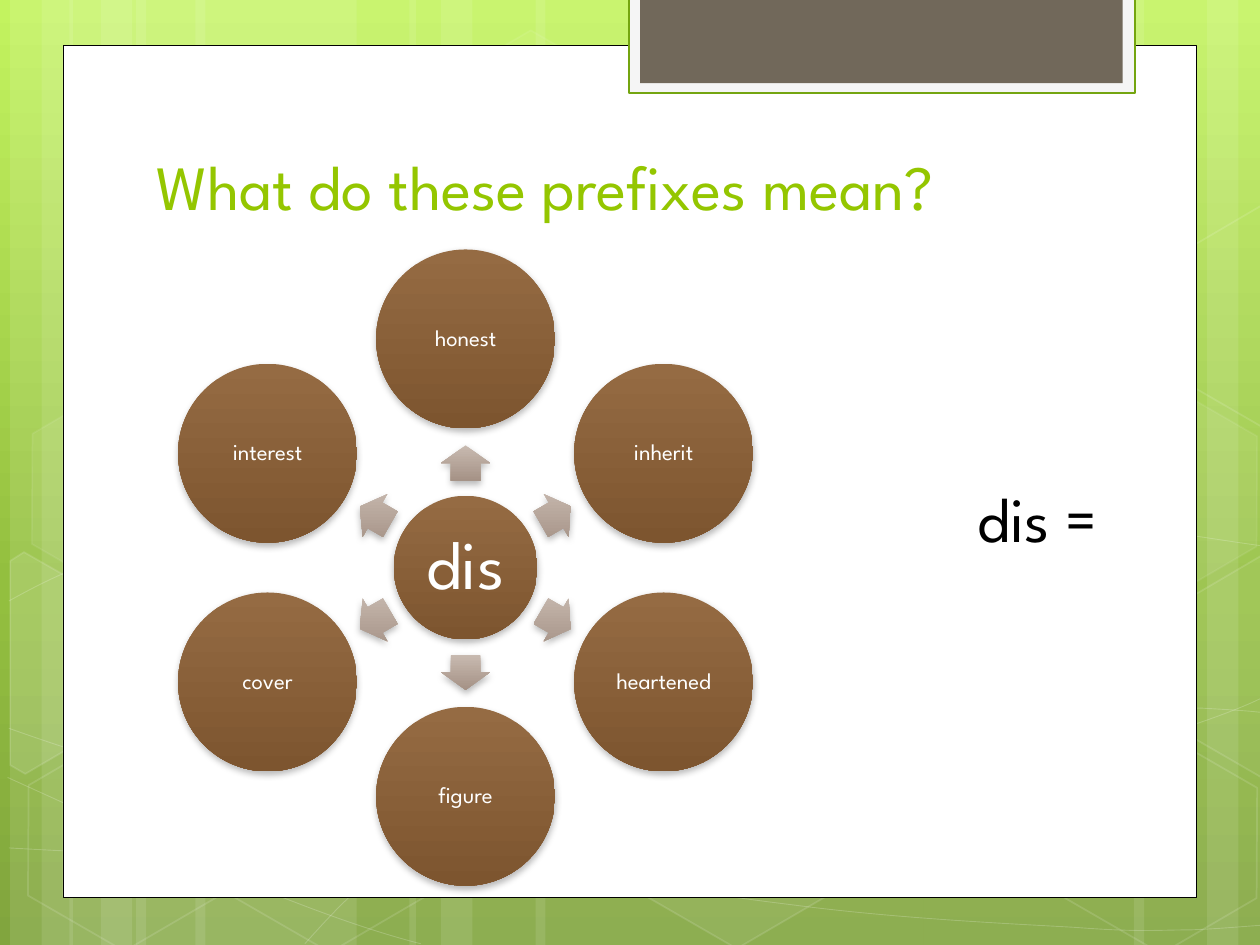
from math import cos, radians, sin

from lxml import etree
from pptx import Presentation
from pptx.dml.color import RGBColor
from pptx.enum.shapes import MSO_SHAPE
from pptx.enum.text import MSO_ANCHOR, PP_ALIGN
from pptx.oxml.ns import qn
from pptx.util import Inches, Pt

FONT = "League Spartan"
BROWN = [(0, "956B43"), (100, "7D552F")]
TAUPE = [(0, "C8BAB0"), (100, "A59286")]


def color(hex_code):
    return RGBColor.from_string(hex_code)


def set_alpha(fill, element, percent):
    """Make the solid white of a fill or line partly transparent."""
    fill.solid()
    fill.fore_color.rgb = color("FFFFFF")
    etree.SubElement(element.find(".//" + qn("a:srgbClr")), qn("a:alpha"), val=str(percent * 1000))


def set_gradient(fill, owner, stops):
    """Vertical gradient that stays upright when its shape is turned."""
    fill.gradient()
    fill.gradient_angle = 270
    stop_list = owner.xpath(".//a:gsLst")[0]
    stop_list.getparent().set("rotWithShape", "0")
    for stop in list(stop_list):
        stop_list.remove(stop)
    for position, hex_code in stops:
        stop = etree.SubElement(stop_list, qn("a:gs"), pos=str(position * 1000))
        etree.SubElement(stop, qn("a:srgbClr"), val=hex_code)


def add_soft_shadow(shape):
    effects = shape._element.spPr.find(qn("a:effectLst"))
    shadow = etree.SubElement(effects, qn("a:outerShdw"), blurRad=str(Pt(4)), dist=str(Pt(2)),
                              dir="5400000", rotWithShape="0")
    black = etree.SubElement(shadow, qn("a:srgbClr"), val="000000")
    etree.SubElement(black, qn("a:alpha"), val="28000")


def add_plain(slide, kind, left, top, width, height):
    shape = slide.shapes.add_shape(kind, Inches(left), Inches(top), Inches(width), Inches(height))
    shape.shadow.inherit = False
    shape.fill.background()
    shape.line.fill.background()
    return shape


def style_glass(shape, fill_alpha, line_alpha, line_width):
    """Translucent white fill and outline; an alpha of 0 leaves that part out."""
    shape.shadow.inherit = False
    shape.fill.background()
    shape.line.fill.background()
    if fill_alpha:
        set_alpha(shape.fill, shape._element.spPr, fill_alpha)
    if line_alpha:
        shape.line.width = Pt(line_width)
        set_alpha(shape.line.fill, shape._element.spPr.find(qn("a:ln")), line_alpha)


def add_outline(slide, points, closed):
    corners = [(Inches(x), Inches(y)) for x, y in points]
    builder = slide.shapes.build_freeform(*corners[0])
    builder.add_line_segments(corners[1:], close=closed)
    return builder.convert_to_shape()


def add_curve(slide, points):
    """Chain of cubic Bezier segments: a start, then three points for each segment."""
    curve = add_outline(slide, points, False)
    lines = curve._element.xpath(".//a:lnTo")
    for i in range(0, len(lines), 3):
        segment = etree.Element(qn("a:cubicBezTo"))
        lines[i].addprevious(segment)
        for line in lines[i:i + 3]:
            segment.append(line[0])
            line.getparent().remove(line)
    return curve


def add_turned_outline(slide, points, center, angle):
    """Closed outline, given as it appears after turning about its center."""
    turn_cos, turn_sin = cos(radians(angle)), sin(radians(angle))
    offsets = [(x - center[0], y - center[1]) for x, y in points]
    upright = [(center[0] + dx * turn_cos + dy * turn_sin, center[1] - dx * turn_sin + dy * turn_cos)
               for dx, dy in offsets]
    outline = add_outline(slide, upright, True)
    outline.rotation = angle
    return outline


def add_text(frame, text, size, hex_code, align=PP_ALIGN.LEFT):
    paragraph = frame.paragraphs[0]
    paragraph.alignment = align
    run = paragraph.add_run()
    run.text = text
    run.font.size = Pt(size)
    run.font.name = FONT
    run.font.color.rgb = color(hex_code)
    return paragraph


def draw_backdrop(slide, height):
    set_gradient(slide.background.fill, slide._element,
                 [(0, "C3F35F"), (62, "93BF3F"), (100, "81A53E")])
    # Vertical light bands: left edge and width
    bands = [(1.08, 1.75), (0.08, 0.5), (0.33, 0.83), (1.55, 1.75), (0.55, 0.5), (0.8, 0.83),
             (7.33, 1.75), (9.58, 0.5), (9, 0.83), (4.25, 3.08), (3.25, 0.5), (3.5, 0.83)]
    for left, band_width in bands:
        band = add_plain(slide, MSO_SHAPE.RECTANGLE, left, 0, band_width, height)
        style_glass(band, 10, 0, 0)
    # Thin flowing lines
    curves = [
        [(0.07, 6.73), (0.61, 6.76), (1.15, 6.79), (1.9, 6.78), (2.65, 6.77), (3.58, 6.75),
         (4.58, 6.65), (5.58, 6.55), (7, 6.36), (7.92, 6.17), (8.83, 5.98), (9.77, 5.68),
         (10.07, 5.51)],
        [(0.07, 4.77), (0.36, 4.61), (0.65, 4.46), (1.21, 4.31), (1.78, 4.16), (2.59, 3.94),
         (3.47, 3.87), (4.36, 3.8), (5.44, 3.79), (6.54, 3.87), (7.64, 3.95), (9.47, 4.26),
         (10.07, 4.34)],
        [(0.06, 6.17), (1.27, 6.72), (2.47, 7.27), (3.34, 7.49)],
        [(0.07, 5.78), (0.38, 5.89), (0.7, 6), (1.28, 6.16), (1.86, 6.31), (2.73, 6.56),
         (3.57, 6.73), (4.4, 6.9), (5.45, 7.08), (6.28, 7.18), (7.11, 7.29), (8, 7.33),
         (8.53, 7.36), (9.05, 7.4), (9.19, 7.38), (9.45, 7.38), (9.71, 7.37), (9.89, 7.35),
         (10.07, 7.34)],
        [(2.42, 7.49), (2.6, 7.29), (2.78, 7.09), (3.02, 6.91), (3.26, 6.73), (3.6, 6.53),
         (3.88, 6.39), (4.16, 6.25), (4.33, 6.19), (4.7, 6.09), (5.06, 5.99), (5.73, 5.85),
         (6.08, 5.78), (6.44, 5.71), (6.49, 5.71), (6.8, 5.69), (7.11, 5.66), (7.6, 5.63),
         (7.94, 5.62), (8.29, 5.61), (8.86, 5.62), (8.86, 5.62), (8.86, 5.62), (9.53, 5.62),
         (9.53, 5.62), (9.71, 5.63), (9.88, 5.64), (9.97, 5.65), (10.06, 5.66), (10.03, 5.65),
         (10.06, 5.66)],
    ]
    for curve in curves:
        style_glass(add_curve(slide, curve), 0, 20, 0.5)
    # Hexagons: left, top, fill alpha, line alpha
    hexagons = [(3.34, 0.36, 4, 8), (4.97, 5.89, 6, 12), (0.11, 5.91, 0, 12),
                (0.14, 3.12, 7, 8), (1.74, 5.92, 0, 12), (7.53, 4.53, 10, 12),
                (8.34, 5.93, 0, 12), (8.34, 3.14, 7, 8)]
    for left, top, fill_alpha, line_alpha in hexagons:
        hexagon = add_plain(slide, MSO_SHAPE.HEXAGON, left, top, 1.75, 1.52)
        hexagon.adjustments[0] = 0.285
        hexagon.adjustments[1] = 1.155
        hexagon.rotation = 30
        style_glass(hexagon, fill_alpha, line_alpha, 1)
    # Hexagons cut off by the slide edges: corners, center, fill alpha
    left_cut = [(0.08, 4.45), (0.19, 4.38), (0.96, 4.82), (0.95, 5.7), (0.2, 6.14), (0.08, 6.07)]
    right_cut = [(9.26, 2.07), (10.01, 1.63), (10.09, 1.68), (10.09, 3.35), (10.02, 3.39),
                 (9.26, 2.95)]
    lower_cut = [(x, y + 2.78) for x, y in right_cut]
    for corners, center, fill_alpha in ((left_cut, (0.36, 5.35), 10),
                                        (lower_cut, (9.85, 5.2), 4),
                                        (right_cut, (9.85, 2.41), 0)):
        style_glass(add_turned_outline(slide, corners, center, 30), fill_alpha, 12, 1)


def draw_page(slide, left, top, width, height):
    """White page with the framed tab hanging over its top edge."""
    panels = [(left, top, width, height, "FFFFFF", "000000", 0.5),
              (left + 4.49, -0.02, 4.02, 0.76, "F5F5F5", "74A510", 1.25),
              (left + 4.58, -0.02, 3.83, 0.68, "71685A", None, 0)]
    for *box, fill_color, line_color, line_width in panels:
        panel = add_plain(slide, MSO_SHAPE.RECTANGLE, *box)
        panel.fill.solid()
        panel.fill.fore_color.rgb = color(fill_color)
        if line_color:
            panel.line.color.rgb = color(line_color)
            panel.line.width = Pt(line_width)


def draw_label(slide, left, top, width, height, text, hex_code, anchor, wrap):
    box = slide.shapes.add_textbox(Inches(left), Inches(top), Inches(width), Inches(height))
    box.text_frame.word_wrap = wrap
    box.text_frame.vertical_anchor = anchor
    add_text(box.text_frame, text, 36, hex_code)


def draw_circle(slide, x, y, diameter, text, size, inset):
    circle = add_plain(slide, MSO_SHAPE.OVAL, x - diameter / 2, y - diameter / 2, diameter, diameter)
    set_gradient(circle.fill, circle._element, BROWN)
    add_soft_shadow(circle)
    frame = circle.text_frame
    frame.word_wrap = True
    frame.vertical_anchor = MSO_ANCHOR.MIDDLE
    frame.margin_left = frame.margin_right = frame.margin_top = frame.margin_bottom = Inches(inset)
    add_text(frame, text, size, "FFFFFF", PP_ALIGN.CENTER).line_spacing = 0.9


def draw_word_wheel(slide, left, top, width, height, prefix, endings):
    """Prefix in the middle, endings around it clockwise from the top."""
    center_x, center_y = left + width / 2, top + height / 2
    ending_size = 1.42
    radius = (height - ending_size) / 2
    draw_circle(slide, center_x, center_y, 1.14, prefix, 39, 0.05)
    for i, ending in enumerate(endings):
        angle = -90 + i * 360 / len(endings)
        dx, dy = cos(radians(angle)), sin(radians(angle))
        arrow = add_plain(slide, MSO_SHAPE.RIGHT_ARROW, center_x + 0.83 * dx - 0.14,
                          center_y + 0.83 * dy - 0.195, 0.28, 0.39)
        arrow.adjustments[0] = 0.6
        arrow.rotation = angle % 360
        set_gradient(arrow.fill, arrow._element, TAUPE)
        add_soft_shadow(arrow)
        draw_circle(slide, center_x + radius * dx, center_y + radius * dy, ending_size, ending, 13, 0.02)


def main():
    deck = Presentation()
    deck.slide_width, deck.slide_height = Inches(10), Inches(7.5)
    slide = deck.slides.add_slide(deck.slide_layouts[6])
    draw_backdrop(slide, 7.5)
    draw_page(slide, 0.5, 0.36, 9, 6.76)
    draw_label(slide, 1.14, 0.57, 7.68, 1.25, "What do these prefixes mean?", "94C600",
               MSO_ANCHOR.BOTTOM, True)
    draw_label(slide, 7.66, 3.76, 1.29, 0.71, "dis =", "000000", MSO_ANCHOR.TOP, False)
    draw_word_wheel(slide, 1.41, 1.98, 4.57, 5.05, "dis",
                    ["honest", "inherit", "heartened", "figure", "cover", "interest"])
    deck.save("out.pptx")


if __name__ == "__main__":
    main()
